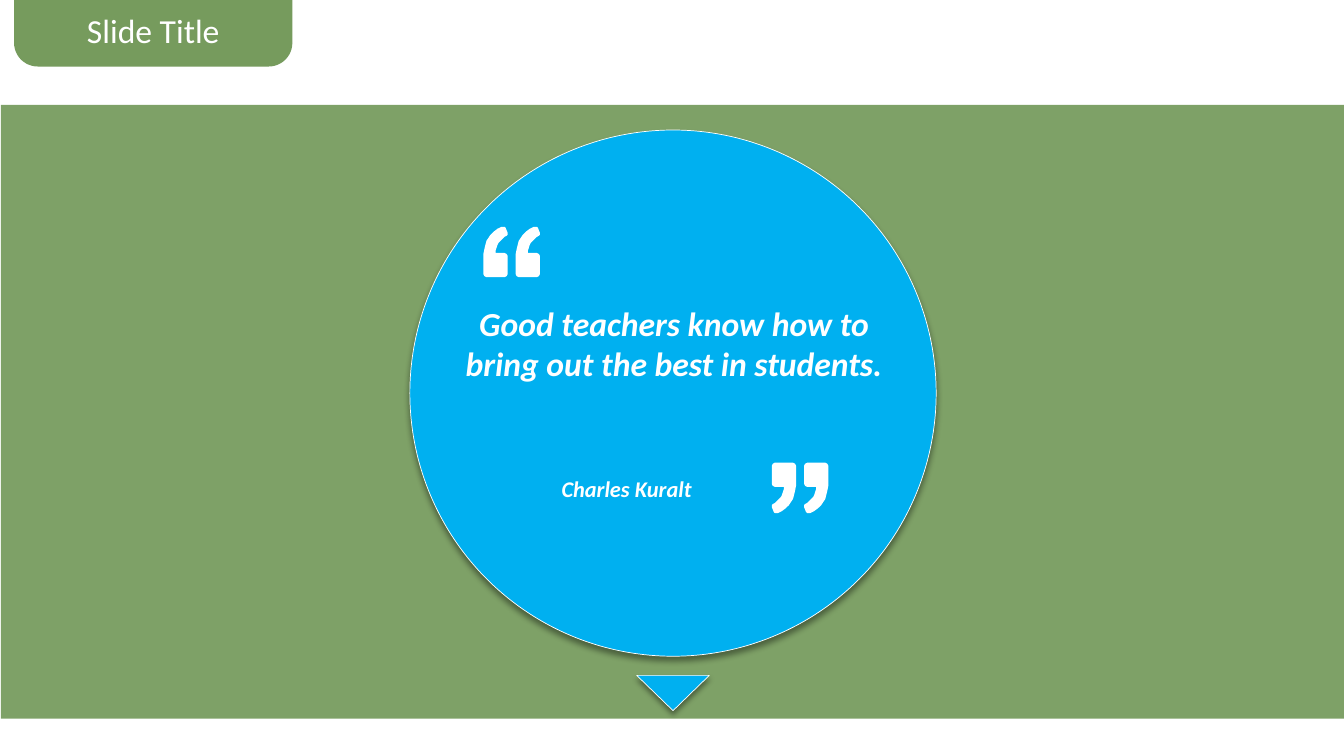
from collections import namedtuple

from lxml.etree import SubElement
from pptx import Presentation
from pptx.dml.color import RGBColor
from pptx.enum.shapes import MSO_SHAPE as Preset
from pptx.enum.text import MSO_AUTO_SIZE as AutoSize, PP_ALIGN as Align
from pptx.oxml.ns import qn
from pptx.util import Inches, Pt

GREEN = RGBColor(0x54, 0x82, 0x35)
BLUE = RGBColor(0x00, 0xB0, 0xF0)
WHITE = RGBColor(0xFF, 0xFF, 0xFF)
FONT = "Calibri"
SLIDE_W, SLIDE_H = 13.33, 7.5

Box = namedtuple("Box", "x y w h")

# Outline of one quotation mark, in hundredths of an inch
MARK_W, MARK_H, MARK_PITCH = 0.24, 0.5, 0.32
MARK_OUTLINE = [
    (20, 0), (21, 0), (22, 1), (24, 6), (24, 8), (23, 9), (21, 10), (19, 12),
    (17, 14), (15, 16), (14, 18), (13, 21), (12, 24), (12, 26), (21, 26),
    (23, 27), (24, 29), (24, 47), (23, 49), (21, 50), (3, 50), (1, 49), (0, 47),
    (0, 33), (0, 27), (1, 22), (2, 18), (3, 14), (5, 11), (7, 8), (10, 5),
    (14, 2), (18, 0),
]


def paint(shape, colour, opacity=100, outlined=False):
    shape.shadow.inherit = False
    shape.fill.solid()
    shape.fill.fore_color.rgb = colour
    if opacity < 100:
        srgb = shape.element.spPr.find(".//" + qn("a:srgbClr"))
        SubElement(srgb, qn("a:alpha"), val=str(opacity * 1000))
    if outlined:
        shape.line.color.rgb = WHITE
        shape.line.width = Pt(0.5)
    else:
        shape.line.fill.background()


def drop_shadow(shape):
    effects = shape.element.spPr.find(qn("a:effectLst"))
    shadow = SubElement(effects, qn("a:outerShdw"), blurRad=str(Pt(4)),
                        dist=str(Pt(3)), dir="5400000", rotWithShape="0")
    black = SubElement(shadow, qn("a:srgbClr"), val="000000")
    SubElement(black, qn("a:alpha"), val="40000")


def add_preset(slide, preset, box):
    return slide.shapes.add_shape(preset, *map(Inches, box))


def add_label(slide, box, text, size, emphasis=False, inset=True):
    frame = slide.shapes.add_textbox(*map(Inches, box)).text_frame
    frame.word_wrap = True
    frame.auto_size = AutoSize.SHAPE_TO_FIT_TEXT
    if not inset:
        frame.margin_left = frame.margin_right = 0
        frame.margin_top = frame.margin_bottom = 0
    paragraph = frame.paragraphs[0]
    paragraph.alignment = Align.CENTER
    run = paragraph.add_run()
    run.text = text
    run.font.name = FONT
    run.font.size = Pt(size)
    run.font.color.rgb = WHITE
    run.font.bold = run.font.italic = emphasis


def add_quote_marks(slide, x, y, rotation=0):
    """Draw a pair of quotation marks; turned by 180 degrees they close a quote."""
    for column in range(2):
        builder = slide.shapes.build_freeform(*MARK_OUTLINE[0], scale=Inches(0.01))
        builder.add_line_segments(MARK_OUTLINE[1:], close=True)
        mark = builder.convert_to_shape(Inches(x + column * MARK_PITCH), Inches(y))
        mark.rotation = rotation
        paint(mark, WHITE)


def add_quote_disc(slide, box):
    disc = add_preset(slide, Preset.OVAL, box)
    pointer_w = 0.72
    pointer = add_preset(slide, Preset.ISOSCELES_TRIANGLE, Box(
        box.x + (box.w - pointer_w) / 2, box.y + box.h + 0.19, pointer_w, 0.35))
    pointer.rotation = 180
    for shape in (disc, pointer):
        paint(shape, BLUE, outlined=True)
        drop_shadow(shape)

    add_label(slide, Box(box.x + 0.38, box.y + 1.71, 4.48, 0.81),
              "Good teachers know how to bring out the best in students.",
              24, emphasis=True, inset=False)
    add_quote_marks(slide, box.x + 0.73, box.y + 0.96)
    add_quote_marks(slide, box.x + 3.59, box.y + 3.3, rotation=180)
    add_label(slide, Box(box.x + 1.17, box.y + 3.42, 1.96, 0.27),
              "Charles Kuralt", 16, emphasis=True, inset=False)


def add_quote_band(slide, box):
    band = add_preset(slide, Preset.RECTANGLE, box)
    paint(band, GREEN, opacity=75)
    diameter = 5.22
    add_quote_disc(slide, Box(box.x + (box.w - diameter) / 2, box.y + 0.25,
                              diameter, diameter))


def add_title_tab(slide, box):
    tab = add_preset(slide, Preset.ROUND_2_SAME_RECTANGLE, box)
    tab.adjustments[0], tab.adjustments[1] = 0, 0.35
    paint(tab, GREEN, opacity=80)
    add_label(slide, Box(box.x, box.y + 0.06, box.w, 0.5), "Slide Title", 24)


def main():
    deck = Presentation()
    deck.slide_width, deck.slide_height = Inches(SLIDE_W), Inches(SLIDE_H)
    slide = deck.slides.add_slide(deck.slide_layouts[6])
    add_quote_band(slide, Box(0.01, 1.04, SLIDE_W, 6.09))
    add_title_tab(slide, Box(0.14, -0.01, 2.76, 0.67))
    deck.save("out.pptx")


if __name__ == "__main__":
    main()
